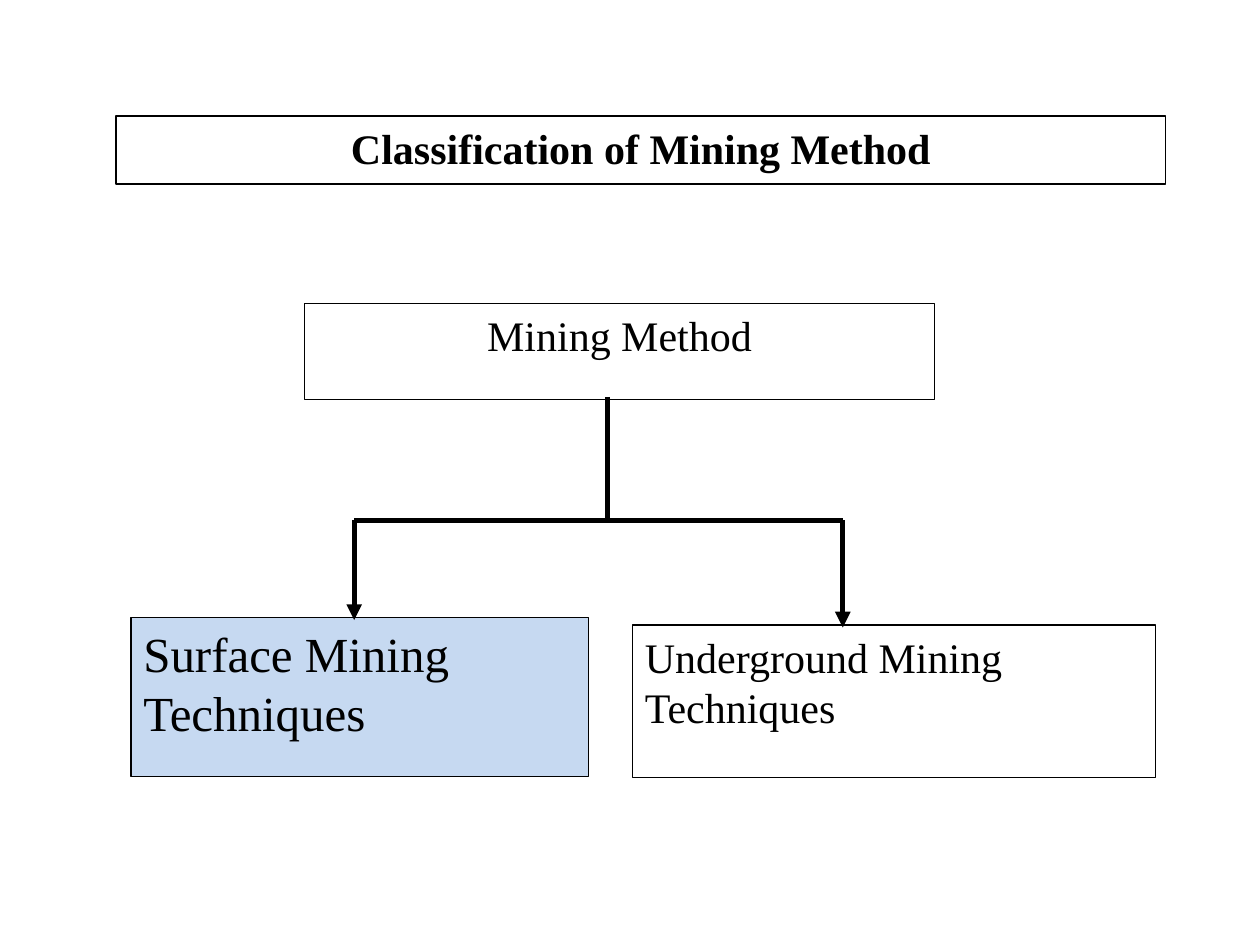
"""Build a slide that charts the classification of mining methods."""
from lxml import etree
from pptx import Presentation
from pptx.dml.color import RGBColor
from pptx.enum.shapes import MSO_CONNECTOR, MSO_SHAPE
from pptx.enum.text import MSO_ANCHOR, PP_ALIGN
from pptx.oxml.ns import qn
from pptx.util import Cm, Pt

RECT = MSO_SHAPE.RECTANGLE
LINE = MSO_CONNECTOR.STRAIGHT
TOP = MSO_ANCHOR.TOP
LEFT, MID = PP_ALIGN.LEFT, PP_ALIGN.CENTER
HUES = {"ink": "000000", "paper": "FFFFFF", "blue": "C6D9F1"}
INK = RGBColor.from_string(HUES["ink"])

deck = Presentation()
deck.slide_width, deck.slide_height = Cm(25.4), Cm(19.05)
slide = deck.slides.add_slide(deck.slide_layouts[6])

boxes = [
    ((2.34, 2.34, 21.16, 1.37), "paper", ["Classification of Mining Method"],
     {"size": Pt(24), "bold": True}, {"alignment": MID}),
    ((6.14, 6.12, 12.7, 1.93), "paper", ["Mining Method"],
     {"size": Pt(24)}, {"alignment": MID, "space_after": Pt(10)}),
    ((2.64, 12.45, 9.22, 3.2), "blue", ["Surface Mining", "Techniques"],
     {"size": Pt(28)}, {"alignment": LEFT}),
    ((12.75, 12.6, 10.54, 3.07), "paper", ["Underground Mining", "Techniques"],
     {"size": Pt(24)}, {"alignment": LEFT}),
]
for place, hue, rows, face, form in boxes:
    box = slide.shapes.add_shape(RECT, *map(Cm, place))
    box.shadow.inherit = False
    box.fill.solid()
    box.fill.fore_color.rgb = RGBColor.from_string(HUES[hue])
    box.line.color.rgb = INK
    box.line.width = Pt(0.75)
    frame = box.text_frame
    frame.word_wrap = True
    frame.vertical_anchor = TOP
    for at, row in enumerate(rows):
        para = frame.add_paragraph() if at else frame.paragraphs[0]
        for key, value in form.items():
            setattr(para, key, value)
        run = para.add_run()
        run.text = row
        run.font.color.rgb = INK
        for key, value in {"name": "Times New Roman", **face}.items():
            setattr(run.font, key, value)

west, stem, east, bar = 7.14, 12.24, 16.99, 10.49
lines = [
    ((west, bar, west, 12.5), True),
    ((east, bar, east, 12.65), True),
    ((west, bar, east, bar), False),
    ((stem, 8, stem, bar), False),
]
for ends, arrow in lines:
    link = slide.shapes.add_connector(LINE, *map(Cm, ends))
    link.line.color.rgb = INK
    link.line.width = Pt(3)
    if arrow:
        tail = etree.SubElement(link.line._get_or_add_ln(), qn("a:tailEnd"))
        tail.set("type", "triangle")
    etree.SubElement(link._element.spPr, qn("a:effectLst"))

deck.save("out.pptx")
